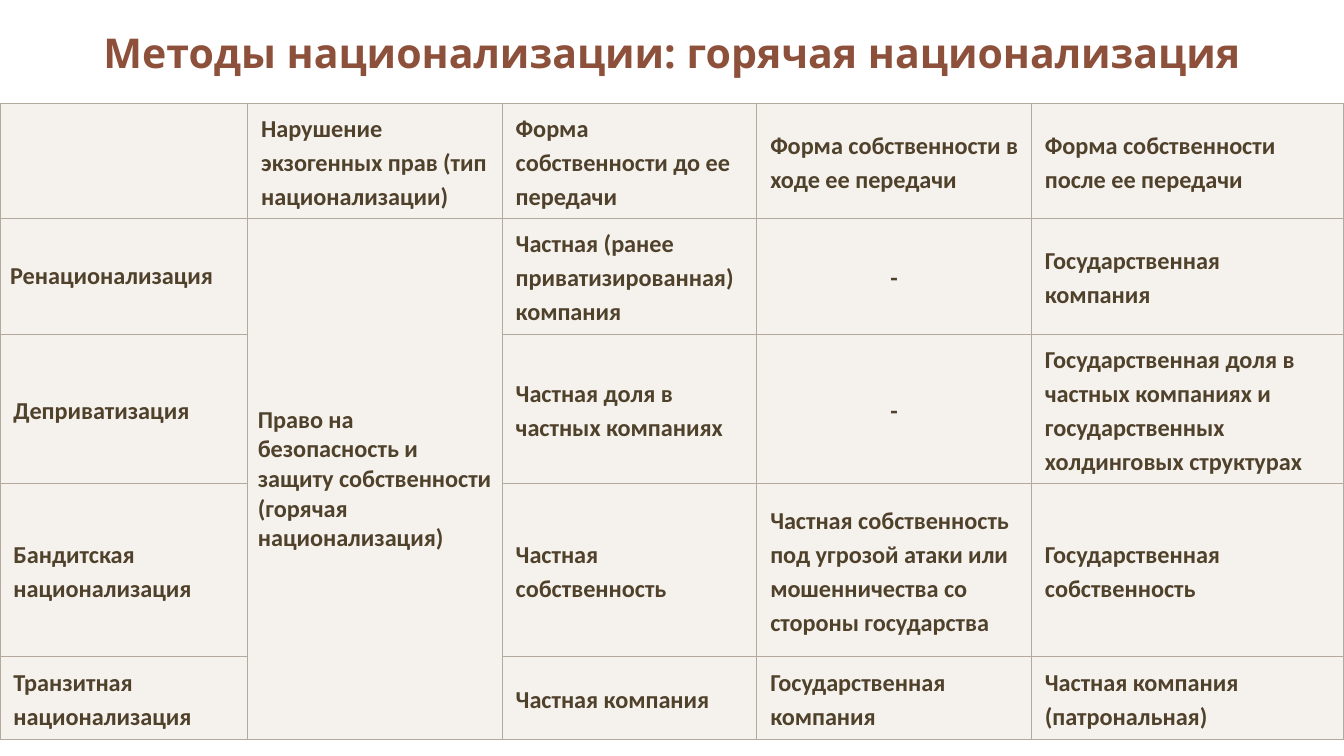
from dataclasses import dataclass

from lxml import etree
from pptx import Presentation
from pptx import util as u
from pptx.dml.color import RGBColor
from pptx.enum import text
from pptx.oxml import ns

PX = 5715  # 160 px to the inch


@dataclass(frozen=True)
class Theme:
    title_color: str = "8D503B"
    text_color: str = "50412B"
    cell_color: str = "EFEAE4"
    cell_alpha: int = 60
    border_color: str = "B3A99D"
    outer_border: float = 1
    inner_border: float = 0.5
    title_font: str = "Open Sans"
    body_font: str = "Calibri"
    title_size: int = 22
    body_size: int = 13


@dataclass(frozen=True)
class Entry:
    words: str
    centered: bool = False
    compact: bool = False
    row_span: int = 1


THEME = Theme()
COLUMNS = (295, 303, 303, 327, 372)
ROWS = (134, 134, 168, 206, 99)
TABLE_TOP, TABLE_HEIGHT = 123, 749
DASH = Entry("-", centered=True)
ENTRIES = (
    (
        None,
        Entry("Нарушение экзогенных прав (тип национализации)"),
        Entry("Форма собственности до ее передачи"),
        Entry("Форма собственности в ходе ее передачи"),
        Entry("Форма собственности после ее передачи"),
    ),
    (
        Entry("Ренационализация", compact=True),
        Entry("Право на безопасность и защиту собственности (горячая национализация)",
              compact=True, row_span=4),
        Entry("Частная (ранее приватизированная) компания"),
        DASH,
        Entry("Государственная компания"),
    ),
    (
        Entry("Деприватизация"),
        None,
        Entry("Частная доля в частных компаниях"),
        DASH,
        Entry("Государственная доля в частных компаниях и "
              "государственных холдинговых структурах"),
    ),
    (
        Entry("Бандитская национализация"),
        None,
        Entry("Частная собственность"),
        Entry("Частная собственность под угрозой атаки или "
              "мошенничества со стороны государства"),
        Entry("Государственная собственность"),
    ),
    (
        Entry("Транзитная национализация"),
        None,
        Entry("Частная компания"),
        Entry("Государственная компания"),
        Entry("Частная компания (патрональная)"),
    ),
)


def px(length: int) -> u.Emu:
    return u.Emu(length * PX)


def style_font(font, name: str, size: int, color: str) -> None:
    font.name, font.size, font.bold = name, u.Pt(size), True
    font.color.rgb = RGBColor.from_string(color)


def add_title(page, words: str) -> None:
    title = page.shapes.title
    title.left, title.top, title.width, title.height = map(px, (19, 0, 1562, TABLE_TOP))
    frame = title.text_frame
    frame.text = words
    frame.vertical_anchor = text.MSO_ANCHOR.MIDDLE
    para = frame.paragraphs[0]
    para.alignment = text.PP_ALIGN.CENTER
    style_font(para.runs[0].font, THEME.title_font, THEME.title_size, THEME.title_color)


def draw_borders(cell, row: int, column: int, row_span: int) -> None:
    """Line all four sides, thicker on the edge of the table."""
    outer = {
        "lnL": column == 0,
        "lnR": column == len(COLUMNS) - 1,
        "lnT": row == 0,
        "lnB": row + row_span == len(ROWS),
    }
    properties = cell._tc.get_or_add_tcPr()
    for tag, is_outer in outer.items():
        width = THEME.outer_border if is_outer else THEME.inner_border
        line = etree.SubElement(properties, ns.qn(f"a:{tag}"), w=str(u.Pt(width)))
        fill = etree.SubElement(line, ns.qn("a:solidFill"))
        etree.SubElement(fill, ns.qn("a:srgbClr"), val=THEME.border_color)


def fill_cell(cell) -> None:
    cell.fill.solid()
    cell.fill.fore_color.rgb = RGBColor.from_string(THEME.cell_color)
    color = cell._tc.tcPr.find(ns.qn("a:solidFill")).find(ns.qn("a:srgbClr"))
    etree.SubElement(color, ns.qn("a:alpha"), val=str(THEME.cell_alpha * 1000))


def write_cell(cell, entry: Entry) -> None:
    cell.text_frame.text = entry.words
    cell.vertical_anchor = text.MSO_ANCHOR.MIDDLE
    para = cell.text_frame.paragraphs[0]
    if entry.compact:
        cell.margin_left = cell.margin_right = px(12)
        cell.margin_top = cell.margin_bottom = px(6)
    else:
        para.line_spacing = 1.15
        para.space_after = u.Pt(10)
    if entry.centered:
        para.alignment = text.PP_ALIGN.CENTER
    style_font(para.runs[0].font, THEME.body_font, THEME.body_size, THEME.text_color)


def add_methods_table(page) -> None:
    frame = page.shapes.add_table(len(ROWS), len(COLUMNS), px(0), px(TABLE_TOP),
                                  px(sum(COLUMNS)), px(TABLE_HEIGHT))
    table = frame.table
    table.first_row = table.horz_banding = False
    for column, width in zip(table.columns, COLUMNS):
        column.width = px(width)
    for row, height in zip(table.rows, ROWS):
        row.height = px(height)
    frame.height = px(TABLE_HEIGHT)
    for r, entries in enumerate(ENTRIES):
        for c, entry in enumerate(entries):
            cell = table.cell(r, c)
            span = entry.row_span if entry else 1
            if span > 1:
                cell.merge(table.cell(r + span - 1, c))
            if not cell.is_spanned:
                draw_borders(cell, r, c, span)
            fill_cell(cell)
            if entry:
                write_cell(cell, entry)


def main() -> None:
    deck = Presentation()
    deck.slide_width, deck.slide_height = px(1600), px(900)
    page = deck.slides.add_slide(deck.slide_layouts.get_by_name("Title Only"))
    add_title(page, "Методы национализации: горячая национализация")
    add_methods_table(page)
    deck.save("out.pptx")


if __name__ == "__main__":
    main()
